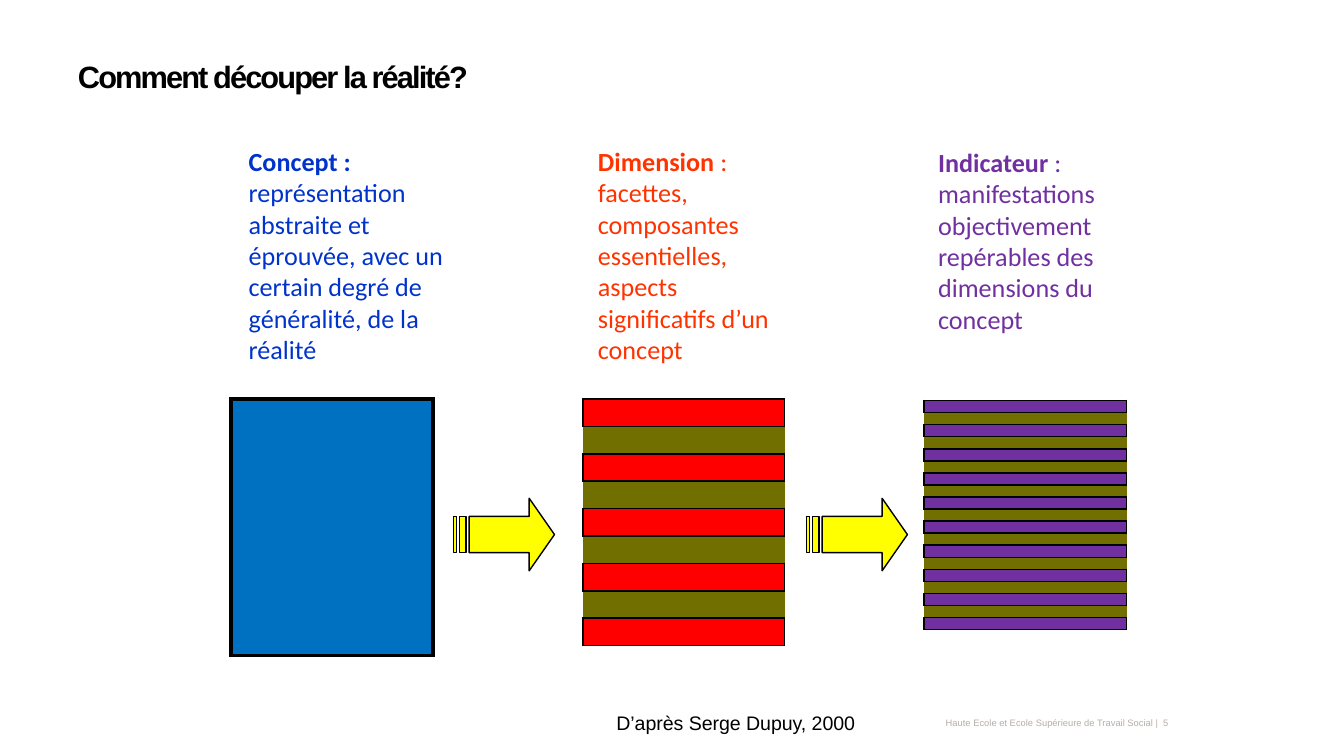
from dataclasses import dataclass

import pptx
import pptx.dml.color
import pptx.enum.text
import pptx.oxml
import pptx.oxml.ns
import pptx.util
from lxml import etree

Cm, Pt = pptx.util.Cm, pptx.util.Pt
RGB = pptx.dml.color.RGBColor.from_string
ANCHOR = pptx.enum.text.MSO_ANCHOR
ALIGN = pptx.enum.text.PP_ALIGN
qn = pptx.oxml.ns.qn


@dataclass(frozen=True)
class Theme:
    black: str = "000000"
    concept_text: str = "0033CC"
    concept_fill: str = "0070C0"
    dimension_text: str = "FF3300"
    dimension_fill: str = "FF0000"
    indicator: str = "7030A0"
    gap: str = "706F00"
    arrow: str = "FFFF00"
    footer: str = "B5AEA7"
    head_font: str = "Arial"
    body_font: str = "Calibri"
    title_size: float = 16.5
    body_size: float = 14
    source_size: float = 10.5
    footer_size: float = 5


THEME = Theme()


def write_runs(tf, runs, font, size, color):
    """Fill the first paragraph with (text, bold) runs."""
    p = tf.paragraphs[0]
    for text, bold in runs:
        r = p.add_run()
        r.text = text
        r.font.name = font
        r.font.size = Pt(size)
        r.font.bold = bold
        r.font.color.rgb = RGB(color)
    return p


def add_text(slide, box, runs, font, size, color):
    tf = slide.shapes.add_textbox(*map(Cm, box)).text_frame
    tf.word_wrap = True
    return tf, write_runs(tf, runs, font, size, color)


def add_title(slide, box, text):
    sp = slide.shapes.title
    sp.left, sp.top, sp.width, sp.height = map(Cm, box)
    tf = sp.text_frame
    tf.word_wrap = True
    tf.auto_size = pptx.enum.text.MSO_AUTO_SIZE.NONE
    tf.vertical_anchor = ANCHOR.TOP
    p = write_runs(tf, [(text, True)], THEME.head_font, THEME.title_size, THEME.black)
    p.alignment = ALIGN.LEFT
    p.runs[0].font._element.set("spc", "-100")


def add_footer(slide, box, text):
    tf, p = add_text(slide, box, [(text, False)], THEME.head_font,
                     THEME.footer_size, THEME.footer)
    tf.vertical_anchor = ANCHOR.MIDDLE
    p.alignment = ALIGN.RIGHT
    p.line_spacing = Pt(7)


def format_cell(cell, fill, sides, weight):
    """Fill a cell and draw only the borders named in sides."""
    cell.margin_left = cell.margin_right = cell.margin_top = cell.margin_bottom = 0
    tcPr = cell._tc.get_or_add_tcPr()
    for side in "LRTB":
        ln = etree.SubElement(tcPr, qn(f"a:ln{side}"), w=str(Pt(weight)))
        if side in sides:
            solid = etree.SubElement(ln, qn("a:solidFill"))
            etree.SubElement(solid, qn("a:srgbClr"), val=THEME.black)
        else:
            etree.SubElement(ln, qn("a:noFill"))
    cell.fill.solid()
    cell.fill.fore_color.rgb = RGB(fill)
    # A tiny empty paragraph lets thin rows keep their height
    etree.SubElement(cell.text_frame.paragraphs[0]._p, qn("a:endParaRPr"), sz="100")


def add_stripes(slide, box, count, color, weight):
    """Stack count coloured bands, with a gap band between neighbours."""
    left, top, width, height = map(Cm, box)
    rows = 2 * count - 1
    table = slide.shapes.add_table(rows, 1, left, top, width, height).table
    table.first_row = table.horz_banding = False
    for i, row in enumerate(table.rows):
        row.height = height // rows
        if i % 2:
            format_cell(row.cells[0], THEME.gap, "TB", weight)
        else:
            format_cell(row.cells[0], color, "LRTB", weight)


def add_striped_arrow(slide, box):
    left, top, width, height = map(Cm, box)

    def points(*fractions):
        return [(left + x * width, top + y * height) for x, y in fractions]

    def bar(x1, x2):
        return points((x1, 0.25), (x1, 0.75), (x2, 0.75), (x2, 0.25))

    head = points((0.75, 0), (0.75, 0.25), (5 / 32, 0.25), (5 / 32, 0.75),
                  (0.75, 0.75), (0.75, 1), (1, 0.5))
    fb = slide.shapes.build_freeform(*head[0])
    fb.add_line_segments(head[1:])
    for outline in (bar(2 / 32, 4 / 32), bar(0, 1 / 32)):
        fb.move_to(*outline[0])
        fb.add_line_segments(outline[1:])
    sp = fb.convert_to_shape()
    sp.shadow.inherit = False
    sp.fill.solid()
    sp.fill.fore_color.rgb = RGB(THEME.arrow)
    sp.line.color.rgb = RGB(THEME.black)
    sp.line.width = Pt(0.75)


def add_level(slide, text_box, runs, text_color, block_box, count, fill, weight):
    """One column: a definition above its block of bands."""
    add_text(slide, text_box, runs, THEME.body_font, THEME.body_size, text_color)
    add_stripes(slide, block_box, count, fill, weight)


def main():
    prs = pptx.Presentation()
    prs.slide_width, prs.slide_height = Cm(25.4), Cm(14.29)
    slide = prs.slides.add_slide(prs.slide_layouts[5])

    add_title(slide, (1.22, 0.97, 14.68, 1.32), "Comment découper la réalité?")

    add_level(slide, (4.45, 2.62, 4.45, 4.45),
              [("Concept : ", True),
               ("représentation abstraite et éprouvée, avec un certain degré "
                "de généralité, de la réalité", False)],
              THEME.concept_text, (4.37, 7.54, 3.81, 4.85), 1, THEME.concept_fill, 2.25)
    add_level(slide, (11.05, 2.62, 4.27, 4.45),
              [("Dimension", True),
               (" : facettes, composantes essentielles, aspects significatifs "
                "d’un concept", False)],
              THEME.dimension_text, (11.02, 7.54, 3.81, 4.67), 5, THEME.dimension_fill, 1)
    add_level(slide, (17.48, 2.64, 4.11, 3.84),
              [("Indicateur ", True),
               (": manifestations objectivement repérables des dimensions du "
                "concept", False)],
              THEME.indicator, (17.46, 7.57, 3.83, 4.35), 10, THEME.indicator, 1)

    for left in (8.57, 15.24):
        add_striped_arrow(slide, (left, 9.42, 1.91, 1.37))

    add_text(slide, (11.4, 13.31, 7.67, 0.71), [("D’après Serge Dupuy, 2000", False)],
             THEME.head_font, THEME.source_size, THEME.black)
    add_footer(slide, (16.08, 13.51, 6.27, 0.25),
               "Haute Ecole et Ecole Supérieure de Travail Social |  5")
    prs.save("out.pptx")


if __name__ == "__main__":
    main()
